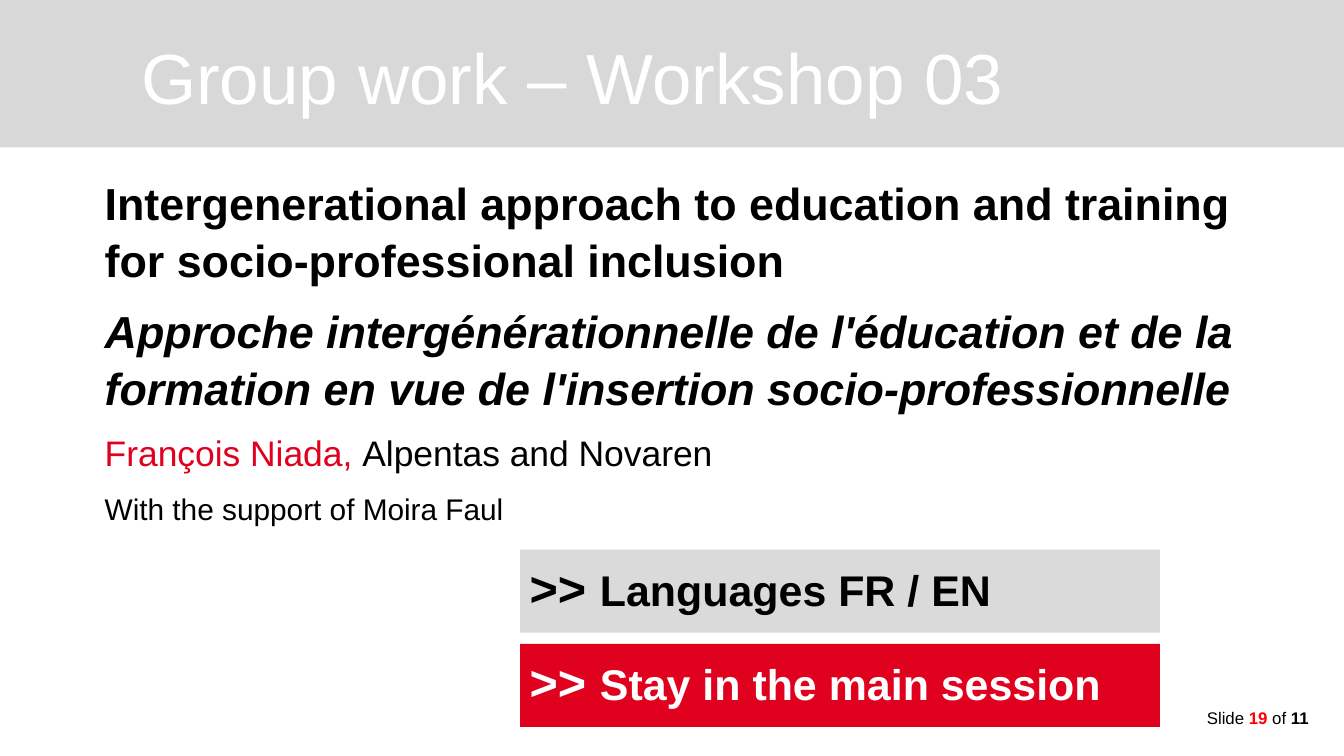
from dataclasses import dataclass

from pptx import Presentation
from pptx.dml.color import RGBColor as Rgb
from pptx.enum.shapes import MSO_SHAPE as Kind
from pptx.enum.text import MSO_ANCHOR as Anchor, PP_ALIGN as Align
from pptx.util import Cm, Pt


@dataclass(frozen=True)
class Theme:
    """Colours, font and type sizes of the slide."""
    font: str = "Arial"
    black: str = "000000"
    white: str = "FFFFFF"
    red: str = "E0011E"
    alert: str = "FF0000"
    band: str = "D8D8D8"
    grey: str = "D9DAD9"
    title: int = 38
    mark: int = 26
    head: int = 24
    label: int = 23
    name: int = 19
    note: int = 16
    foot: int = 9


LOOK = Theme()


def add_run(para, text, size=LOOK.head, color=LOOK.black, bold=False, italic=False):
    """Add text to a paragraph in the given format."""
    run = para.add_run()
    run.text = text
    font = run.font
    font.name, font.size = LOOK.font, Pt(size)
    font.bold, font.italic = bold, italic
    font.color.rgb = Rgb.from_string(color)


def fill_frame(frame, paras, anchor=Anchor.TOP, align=Align.LEFT, lead=1.05, gap=0):
    """Set up a text frame and write paragraphs made of (text, format) runs."""
    frame.word_wrap = True
    frame.vertical_anchor = anchor
    frame.margin_left = frame.margin_right = Cm(0.18)
    frame.margin_top = frame.margin_bottom = Cm(0.1)
    for i, runs in enumerate(paras):
        para = frame.add_paragraph() if i else frame.paragraphs[0]
        para.alignment, para.line_spacing = align, lead
        if i:
            para.space_before = Pt(gap)
        for text, style in runs:
            add_run(para, text, **style)


def add_text(slide, area, paras, **style):
    """Add a text box."""
    box = slide.shapes.add_textbox(*map(Cm, area))
    fill_frame(box.text_frame, paras, **style)


def add_bar(slide, area, color):
    """Add a plain filled rectangle."""
    bar = slide.shapes.add_shape(Kind.RECTANGLE, *map(Cm, area))
    bar.shadow.inherit = False
    bar.fill.solid()
    bar.fill.fore_color.rgb = Rgb.from_string(color)
    bar.line.fill.background()
    return bar


def add_label(slide, top, text, fill, color):
    """Add a filled bar with a marked label."""
    bar = add_bar(slide, (9.83, top, 12.09, 1.57), fill)
    fill_frame(bar.text_frame, [[
        (">> ", dict(size=LOOK.mark, color=color, bold=True)),
        (text, dict(size=LOOK.label, color=color, bold=True)),
    ]])


def main():
    """Build the workshop slide and save it."""
    deck = Presentation()
    deck.slide_width, deck.slide_height = Cm(25.4), Cm(14.29)
    slide = deck.slides.add_slide(deck.slide_layouts[6])

    add_bar(slide, (0, 0, 25.4, 2.79), LOOK.band)
    foot = dict(size=LOOK.foot)
    add_text(slide, (22, 13.28, 3, 0.58), [[
        ("Slide ", foot),
        ("19", dict(foot, color=LOOK.alert, bold=True)),
        (" of ", foot),
        ("11 ", dict(foot, bold=True)),
    ]], align=Align.RIGHT, lead=1.0)
    add_text(slide, (2.49, 0, 20.19, 2.79), [[
        ("Group work – Workshop 03", dict(size=LOOK.title, color=LOOK.white)),
    ]], anchor=Anchor.MIDDLE)
    add_text(slide, (1.8, 3.18, 22.73, 8.18), [
        [("Intergenerational approach to education and training "
          "for socio-professional inclusion", dict(bold=True))],
        [("Approche intergénérationnelle de l'éducation et de la "
          "formation en vue de l'insertion socio-professionnelle",
          dict(bold=True, italic=True))],
        [("François Niada, ", dict(size=LOOK.name, color=LOOK.red)),
         ("Alpentas and Novaren", dict(size=LOOK.name))],
        [("With the support of Moira Faul", dict(size=LOOK.note))],
    ], gap=8)
    add_label(slide, 12.17, "Stay in the main session", LOOK.red, LOOK.white)
    add_label(slide, 10.39, "Languages FR / EN", LOOK.grey, LOOK.black)

    deck.save("out.pptx")


if __name__ == "__main__":
    main()
